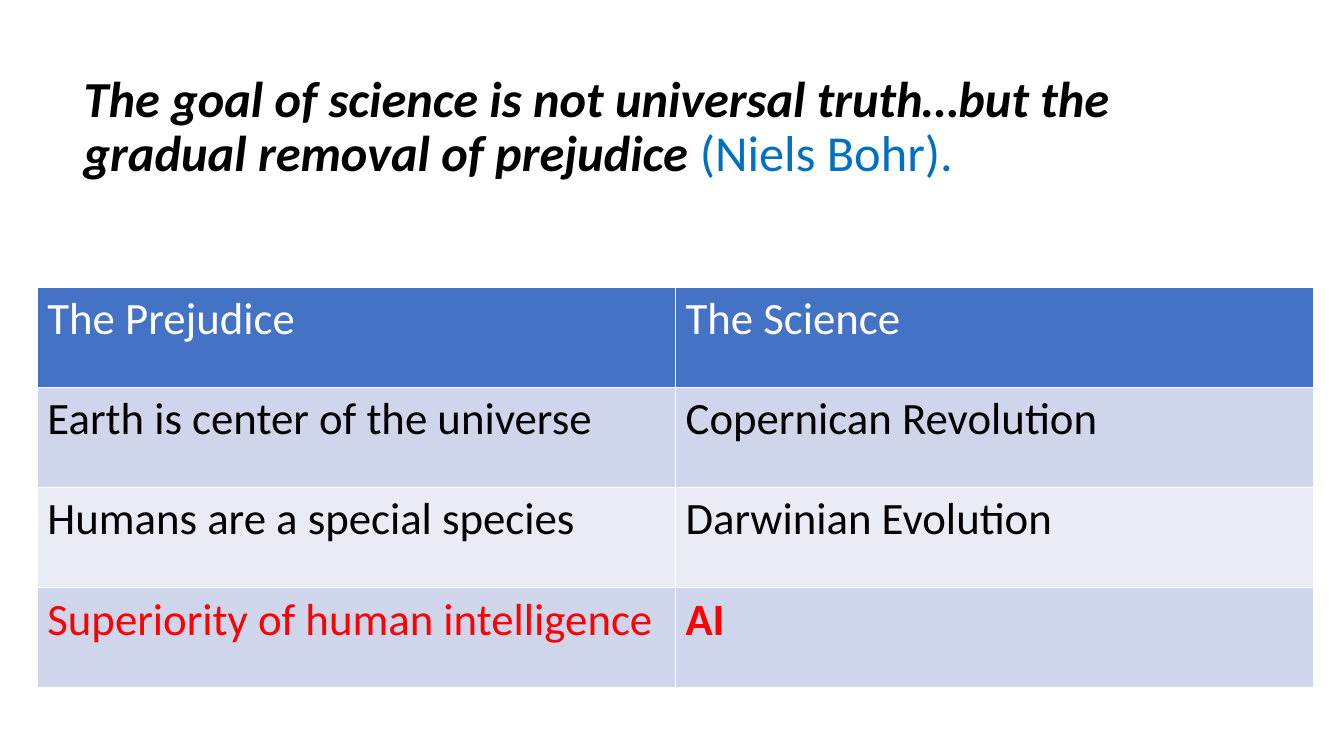
"""Build a slide that sets three prejudices against the science that removed them."""
from dataclasses import dataclass

from pptx import Presentation
from pptx import util as u
from pptx.dml.color import RGBColor
from pptx.enum import text as t
from pptx.oxml.ns import qn

EMU = 9144


@dataclass(frozen=True)
class Theme:
    font: str = "Calibri"
    quote: int = 36
    cell: int = 32
    ink: str = "000000"
    white: str = "FFFFFF"
    blue: str = "0070C0"
    red: str = "FF0000"
    head: str = "4472C4"
    dark: str = "CFD5EA"
    light: str = "E9EBF5"


@dataclass(frozen=True)
class Row:
    belief: str
    answer: str
    fill: str
    color: str
    bold: bool = False


THEME = Theme()
ROWS = (
    Row("The Prejudice", "The Science", THEME.head, THEME.white),
    Row("Earth is center of the universe", "Copernican Revolution", THEME.dark, THEME.ink),
    Row("Humans are a special species", "Darwinian Evolution", THEME.light, THEME.ink),
    Row("Superiority of human intelligence", "AI", THEME.dark, THEME.red, True),
)


def px(n: int) -> u.Emu:
    return u.Emu(n * EMU)


def write(par, words: str, *, size: int, color: str,
          bold: bool = False, slant: bool = False) -> None:
    run = par.add_run()
    run.text = words
    font = run.font
    font.name, font.size = THEME.font, u.Pt(size)
    font.bold, font.italic = bold, slant
    font.color.rgb = RGBColor.from_string(color)


def quote(body) -> None:
    body.left, body.top, body.width, body.height = map(px, (73, 68, 1150, 157))
    frame = body.text_frame
    frame.word_wrap = True
    frame.auto_size = t.MSO_AUTO_SIZE.NONE
    frame.vertical_anchor = t.MSO_ANCHOR.TOP
    par = frame.paragraphs[0]
    props = par._p.get_or_add_pPr()
    props.set("marL", "0")
    props.set("indent", "0")
    props.append(props.makeelement(qn("a:buNone"), {}))
    par.line_spacing = 0.9
    par.space_before = u.Pt(0)
    write(par, "The goal of science is not universal truth…but the gradual removal of prejudice ",
          size=THEME.quote, color=THEME.ink, bold=True, slant=True)
    write(par, "(Niels Bohr).", size=THEME.quote, color=THEME.blue)


def grid(slide) -> None:
    box = map(px, (37, 285, 1266, 397))
    table = slide.shapes.add_table(len(ROWS), 2, *box).table
    for row, line in zip(ROWS, table.rows):
        for words, cell, bold in zip((row.belief, row.answer), line.cells, (False, row.bold)):
            cell.fill.solid()
            cell.fill.fore_color.rgb = RGBColor.from_string(row.fill)
            write(cell.text_frame.paragraphs[0], words,
                  size=THEME.cell, color=row.color, bold=bold)


def main() -> None:
    deck = Presentation()
    deck.slide_width, deck.slide_height = px(1333), px(750)
    slide = deck.slides.add_slide(deck.slide_layouts[1])
    title = slide.shapes.title.element
    title.getparent().remove(title)
    quote(slide.placeholders[1])
    grid(slide)
    deck.save("out.pptx")


if __name__ == "__main__":
    main()
